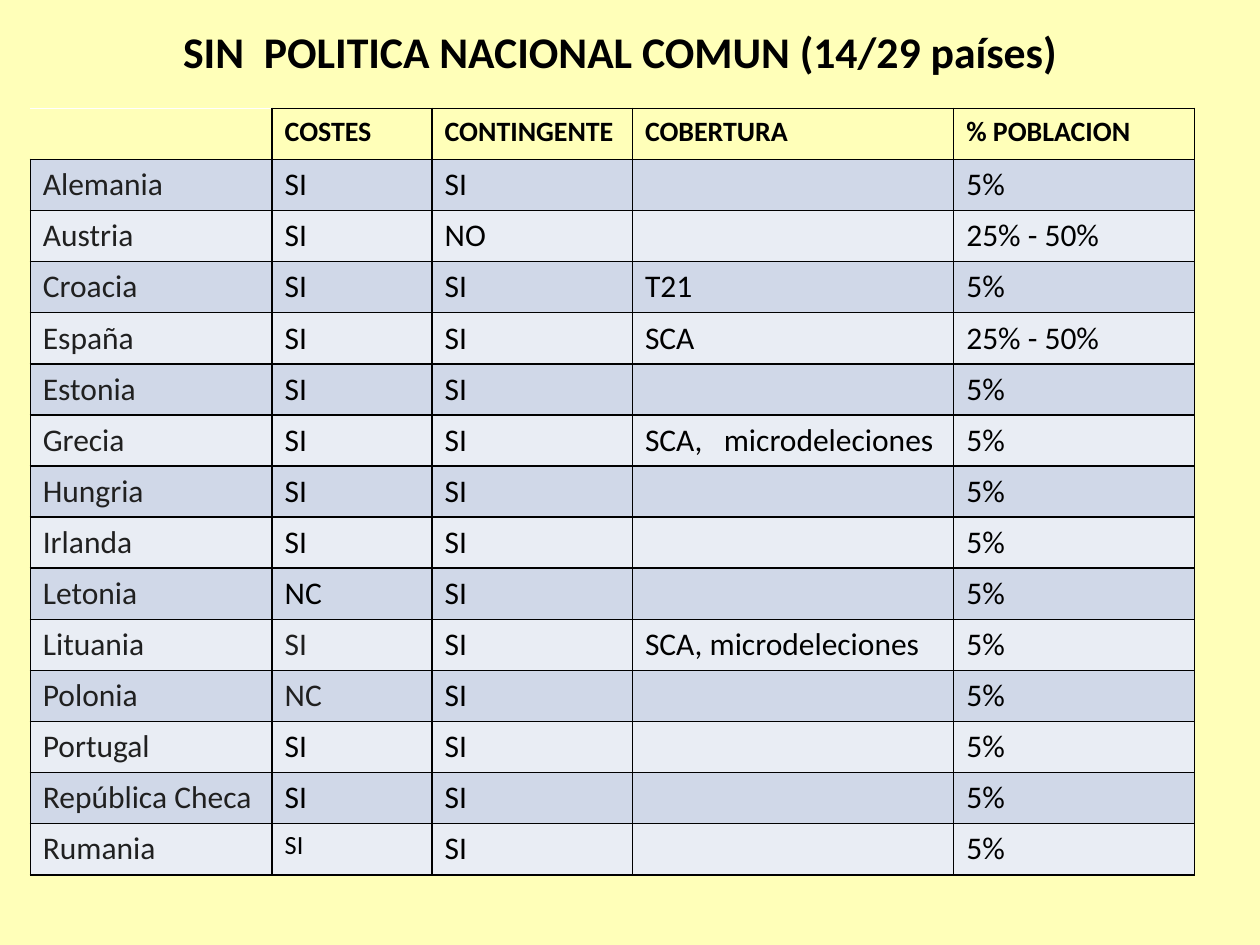
from lxml.etree import SubElement as Sub
from pptx import Presentation
from pptx.dml.color import RGBColor as RGB
from pptx.enum.text import MSO_AUTO_SIZE as Fit, PP_ALIGN as Align
from pptx.oxml.ns import qn
from pptx.util import Inches, Pt

BLACK = RGB(0x00, 0x00, 0x00)
GRAY = RGB(0x20, 0x20, 0x20)
WHITE = RGB(0xFF, 0xFF, 0xFF)
CREAM = RGB(0xFF, 0xFF, 0xB9)
BANDS = RGB(0xD0, 0xD8, 0xE8), RGB(0xE9, 0xED, 0xF4)

TITLE = "SIN  POLITICA NACIONAL COMUN (14/29 países)"
HEAD = ("", "COSTES", "CONTINGENTE", "COBERTURA", "% POBLACION")
ROWS = [
    ("Alemania", "SI", "SI", "", "5%"),
    ("Austria", "SI", "NO", "", "25% - 50%"),
    ("Croacia", "SI", "SI", "T21", "5%"),
    ("España", "SI", "SI", "SCA", "25% - 50%"),
    ("Estonia", "SI", "SI", "", "5%"),
    ("Grecia", "SI", "SI", "SCA,   microdeleciones", "5%"),
    ("Hungria", "SI", "SI", "", "5%"),
    ("Irlanda", "SI", "SI", "", "5%"),
    ("Letonia", "NC", "SI", "", "5%"),
    ("Lituania", "SI", "SI", "SCA, microdeleciones", "5%"),
    ("Polonia", "NC", "SI", "", "5%"),
    ("Portugal", "SI", "SI", "", "5%"),
    ("República Checa", "SI", "SI", "", "5%"),
    ("Rumania", "SI", "SI", "", "5%"),
]
COLS = (1.92, 1.27, 1.59, 2.55, 1.91)
LEFT, TOP, HIGH = 0.24, 0.86, 6.08

HEAD_FONT = {"name": "Calibri", "size": Pt(16), "bold": True}
BODY_FONT = {"name": "Calibri", "size": Pt(18), "bold": False}
TITLE_FONT = {"name": "Calibri", "size": Pt(25), "bold": True}
SMALL = {(len(ROWS), 1): Pt(15)}
PALE = {(10, 1), (11, 1)}
EDGES = dict.fromkeys("LRTB", BLACK)
CORNER = {"R": BLACK, "T": WHITE, "B": BLACK}


def write(para, text, font, color=BLACK):
    run = para.add_run()
    run.text = text
    for key, value in font.items():
        setattr(run.font, key, value)
    run.font.color.rgb = color


def frame(cell, edges):
    """Draw the cell's borders; must come before its fill."""
    props = cell._tc.get_or_add_tcPr()
    for side in "LRTB":
        line = Sub(props, qn(f"a:ln{side}"), w=str(Pt(1)))
        if side in edges:
            fill = Sub(line, qn("a:solidFill"))
            Sub(fill, qn("a:srgbClr"), val=str(edges[side]))
        else:
            Sub(line, qn("a:noFill"))


def add_grid(slide):
    data = [HEAD, *ROWS]
    box = slide.shapes.add_table(
        len(data), len(COLS), Inches(LEFT), Inches(TOP),
        Inches(sum(COLS)), Inches(HIGH))
    table = box.table
    table.first_row = table.horz_banding = False
    for col, wide in zip(table.columns, COLS):
        col.width = Inches(wide)
    for r, row in enumerate(data):
        table.rows[r].height = Inches(HIGH / len(data))
        for c, text in enumerate(row):
            cell = table.cell(r, c)
            frame(cell, EDGES if r or c else CORNER)
            if r:
                cell.fill.solid()
                cell.fill.fore_color.rgb = BANDS[(r - 1) % 2]
            else:
                cell.fill.background()
            if text:
                font = dict(BODY_FONT if r else HEAD_FONT)
                font["size"] = SMALL.get((r, c), font["size"])
                color = GRAY if c == 0 or (r, c) in PALE else BLACK
                write(cell.text_frame.paragraphs[0], text, font, color)


def add_title(slide):
    box = slide.shapes.add_textbox(
        Inches(0.39), Inches(0.15), Inches(9.06), Inches(0.52))
    text = box.text_frame
    text.word_wrap = True
    text.auto_size = Fit.SHAPE_TO_FIT_TEXT
    para = text.paragraphs[0]
    para.alignment = Align.CENTER
    write(para, TITLE, TITLE_FONT)


def main():
    deck = Presentation()
    deck.slide_width, deck.slide_height = Inches(10), Inches(7.5)
    slide = deck.slides.add_slide(deck.slide_layouts[6])
    back = slide.background.fill
    back.solid()
    back.fore_color.rgb = CREAM
    add_grid(slide)
    add_title(slide)
    deck.save("out.pptx")


if __name__ == "__main__":
    main()
